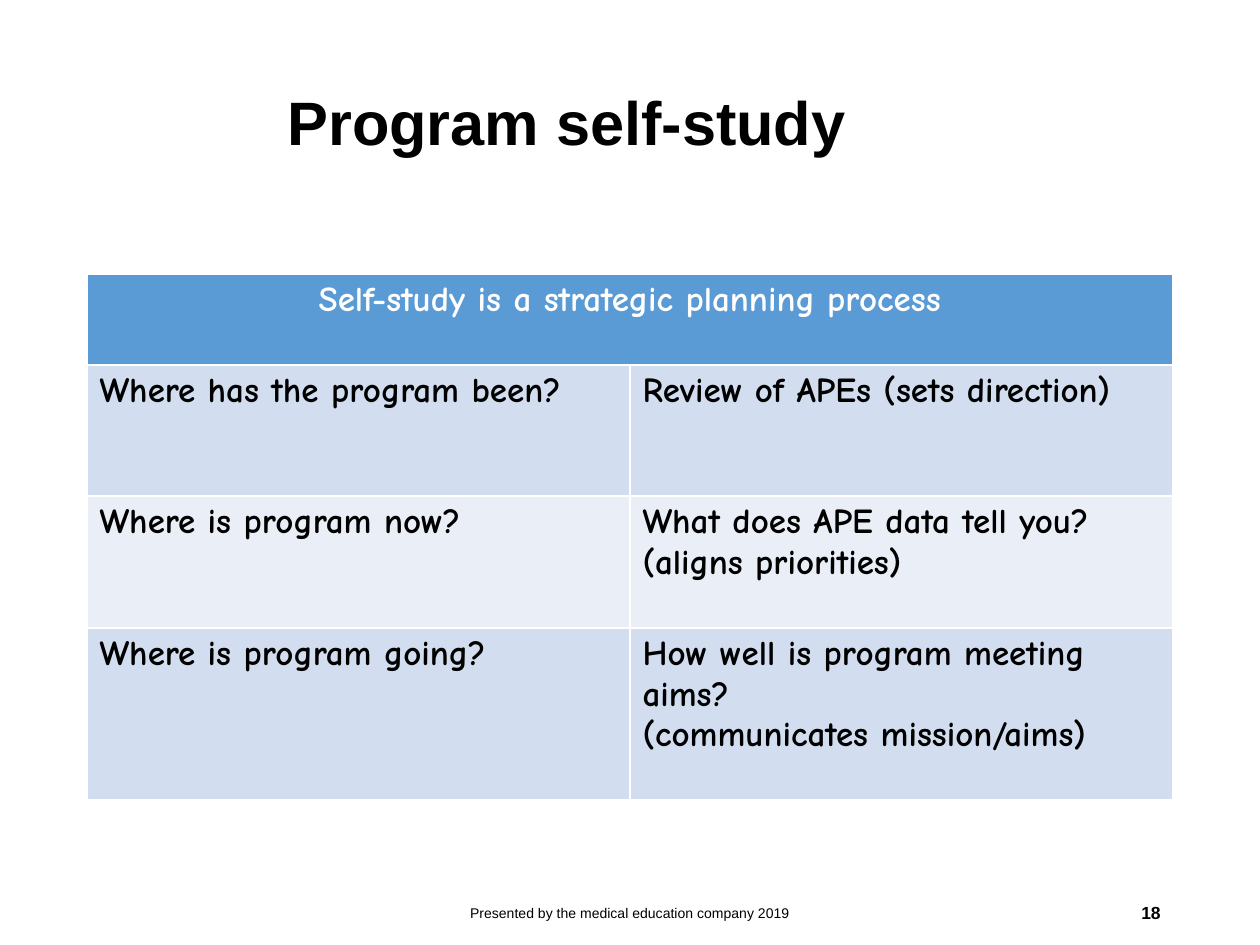
import pptx
import pptx.dml.color
import pptx.enum.text
import pptx.oxml
import pptx.oxml.ns
import pptx.util

Pt = pptx.util.Pt
RGBColor = pptx.dml.color.RGBColor
Align = pptx.enum.text.PP_ALIGN
Anchor = pptx.enum.text.MSO_ANCHOR

BLACK = RGBColor(0x00, 0x00, 0x00)
WHITE = RGBColor(0xFF, 0xFF, 0xFF)
HEADER_BLUE = RGBColor(0x5B, 0x9B, 0xD5)
BAND_DARK = RGBColor(0xD2, 0xDE, 0xEF)
BAND_LIGHT = RGBColor(0xEA, 0xEF, 0xF7)

HEADING = "Self-study is a strategic planning process"
QUESTIONS = [
    ("Where has the program been?", "Review of APEs (sets direction)"),
    ("Where is program now?", "What does APE data tell you? (aligns priorities)"),
    ("Where is program going?",
     "How well is program meeting aims?\n(communicates mission/aims)"),
]
ROW_HEIGHTS = [52, 75, 75.5, 98]
COLUMN_WIDTH = 310.3


def format_text(text_frame, font_name, size, color, bold=False, alignment=Align.LEFT):
    """Apply one font and alignment to all text of a frame."""
    for paragraph in text_frame.paragraphs:
        paragraph.alignment = alignment
        for run in paragraph.runs:
            run.font.name = font_name
            run.font.size = Pt(size)
            run.font.bold = bold
            run.font.color.rgb = color


def add_title(slide, text):
    """Fill and place the title placeholder."""
    title = slide.shapes.title
    title.left, title.top, title.width, title.height = Pt(157), Pt(19.5), Pt(514), Pt(104.4)
    title.text_frame.text = text
    title.text_frame.vertical_anchor = Anchor.MIDDLE
    title.text_frame.paragraphs[0].line_spacing = 0.9
    format_text(title.text_frame, "Arial", 35, BLACK, True)


def add_footer(slide, text, left, width, size, alignment, bold=False):
    """Add a text box on the footer line."""
    box = slide.shapes.add_textbox(Pt(left), Pt(507), Pt(width), Pt(28.8))
    box.text_frame.word_wrap = True
    box.text_frame.vertical_anchor = Anchor.MIDDLE
    box.text_frame.text = text
    format_text(box.text_frame, "Arial", size, BLACK, bold, alignment)


def style_cell(cell, fill_color):
    """Give a cell thin white borders and a solid fill."""
    properties = cell._tc.get_or_add_tcPr()
    for side in ("lnL", "lnR", "lnT", "lnB"):
        properties.append(pptx.oxml.parse_xml(
            f'<a:{side} {pptx.oxml.ns.nsdecls("a")} w="{Pt(1)}"><a:solidFill>'
            f'<a:srgbClr val="{WHITE}"/></a:solidFill></a:{side}>'))
    cell.fill.solid()
    cell.fill.fore_color.rgb = fill_color


def add_question_table(slide):
    """Add the table with a merged heading and banded question rows."""
    table = slide.shapes.add_table(
        len(ROW_HEIGHTS), 2, Pt(49.7), Pt(156.5),
        Pt(2 * COLUMN_WIDTH), Pt(sum(ROW_HEIGHTS))).table
    for column in table.columns:
        column.width = Pt(COLUMN_WIDTH)
    for row, height in zip(table.rows, ROW_HEIGHTS):
        row.height = Pt(height)
    table.cell(0, 0).merge(table.cell(0, 1))
    for column_index in range(2):
        style_cell(table.cell(0, column_index), HEADER_BLUE)
    heading = table.cell(0, 0).text_frame
    heading.text = HEADING
    format_text(heading, "Comic Neue", 20, WHITE, True, Align.CENTER)
    for row_index, texts in enumerate(QUESTIONS, start=1):
        for column_index, text in enumerate(texts):
            cell = table.cell(row_index, column_index)
            style_cell(cell, BAND_DARK if row_index % 2 else BAND_LIGHT)
            cell.text_frame.text = text
            format_text(cell.text_frame, "Comic Neue", 20, BLACK, True)


def main():
    """Build and save the slide."""
    presentation = pptx.Presentation()
    presentation.slide_width, presentation.slide_height = Pt(720), Pt(540)
    slide = presentation.slides.add_slide(presentation.slide_layouts[5])
    add_question_table(slide)
    add_title(slide, "Program self-study")
    add_footer(slide, "Presented by the medical education company 2019",
               238.3, 243.4, 8, Align.CENTER)
    add_footer(slide, "18", 508.3, 162, 10, Align.RIGHT, True)
    presentation.save("out.pptx")


if __name__ == "__main__":
    main()
